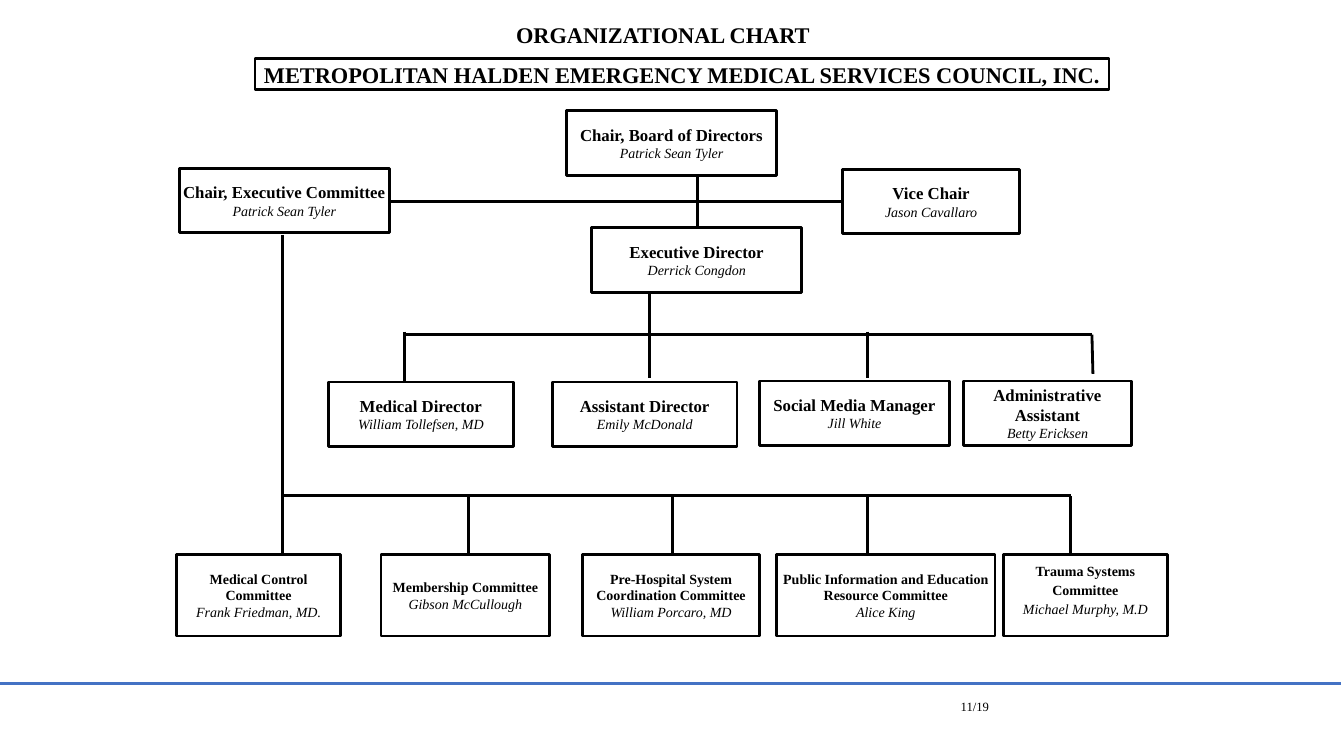
from lxml import etree
from pptx import Presentation
from pptx.dml.color import RGBColor
from pptx.enum.shapes import MSO_CONNECTOR as Connector, MSO_SHAPE as Shape
from pptx.enum.text import MSO_ANCHOR as Anchor, MSO_AUTO_SIZE as AutoSize, PP_ALIGN as Align
from pptx.oxml.ns import qn
from pptx.util import Inches, Pt

BLACK = RGBColor(0x00, 0x00, 0x00)
WHITE = RGBColor(0xFF, 0xFF, 0xFF)
BLUE = RGBColor(0x44, 0x72, 0xC4)
FONT = "Times New Roman"
LINE_WIDTH = Pt(2)

# Content
TITLE = "ORGANIZATIONAL CHART"
COUNCIL = "METROPOLITAN HALDEN EMERGENCY MEDICAL SERVICES COUNCIL, INC."
PAGE_NUMBER = "11/19"

# Officers and staff: left, top, width, filled, role lines, person
STAFF = [
    (5.62, 1.1, 2.08, True, ["Chair, Board of Directors"], "Patrick Sean Tyler"),
    (1.78, 1.67, 2.08, False, ["Chair, Executive Committee"], "Patrick Sean Tyler"),
    (8.36, 1.68, 1.75, True, ["Vice Chair"], "Jason Cavallaro"),
    (5.87, 2.26, 2.08, False, ["Executive Director"], "Derrick Congdon"),
    (3.26, 3.79, 1.83, False, ["Medical Director"], "William Tollefsen, MD"),
    (5.48, 3.79, 1.83, True, ["Assistant Director"], "Emily McDonald"),
    (7.53, 3.78, 1.89, False, ["Social Media Manager"], "Jill White"),
    (9.56, 3.78, 1.66, False, ["Administrative", "Assistant"], "Betty Ericksen"),
]
STAFF_HEIGHT = 0.64

# Committees: left, width, name lines, person
COMMITTEES = [
    (1.75, 1.63, ["Medical Control", "Committee"], "Frank Friedman, MD."),
    (3.78, 1.67, ["Membership Committee"], "Gibson McCullough"),
    (5.78, 1.75, ["Pre-Hospital System", "Coordination Committee"], "William Porcaro, MD"),
    (7.7, 2.17, ["Public Information and Education", "Resource Committee"], "Alice King"),
]
TRAUMA_LEFT, TRAUMA_WIDTH = 9.95, 1.63
TRAUMA_NAME, TRAUMA_PERSON = ["Trauma Systems", "Committee"], "Michael Murphy, M.D"
COMMITTEE_TOP, COMMITTEE_HEIGHT = 5.5, 0.81

# Connectors: x1, y1, x2, y2
COMMITTEE_BUS = 4.92
COMMITTEE_DROPS = [4.65, 6.67, 8.6, 10.62]
LINES = [
    (6.92, 1.75, 6.92, 2.25),
    (3.87, 2, 6.95, 2),
    (6.92, 2, 8.35, 2),
    (6.44, 2.92, 6.44, 3.75),
    (4, 3.32, 10.83, 3.32),
    (4.01, 3.29, 4.01, 3.8),
    (8.6, 3.29, 8.6, 3.75),
    (10.83, 3.32, 10.84, 3.71),
    (2.8, 2.33, 2.8, COMMITTEE_TOP),
    (2.8, COMMITTEE_BUS, COMMITTEE_DROPS[-1], COMMITTEE_BUS),
] + [(x, COMMITTEE_BUS, x, COMMITTEE_TOP) for x in COMMITTEE_DROPS]

deck = Presentation()
deck.slide_width, deck.slide_height = Inches(13.33), Inches(7.5)
page = deck.slides.add_slide(deck.slide_layouts[6])


def write(frame, lines, size=10, bold=True, person=None, person_size=10,
          align=Align.CENTER, anchor=Anchor.MIDDLE, wrap=False,
          spacing=None, gap=0):
    frame.word_wrap = wrap
    frame.vertical_anchor = anchor
    rows = [(line, size, bold, False) for line in lines]
    if person:
        rows.append((person, person_size, False, True))
    for index, (text, points, heavy, italic) in enumerate(rows):
        para = frame.add_paragraph() if index else frame.paragraphs[0]
        para.alignment = align
        if spacing:
            para.line_spacing = spacing
        if index and gap:
            para.space_before = Pt(gap)
        span = para.add_run()
        span.text = text
        span.font.name = FONT
        span.font.size = Pt(points)
        span.font.bold = heavy
        span.font.italic = italic
        span.font.color.rgb = BLACK


def add_box(left, top, width, height, filled=False):
    box = page.shapes.add_shape(
        Shape.RECTANGLE, Inches(left), Inches(top), Inches(width), Inches(height))
    box.shadow.inherit = False
    if filled:
        box.fill.solid()
        box.fill.fore_color.rgb = WHITE
    else:
        box.fill.background()
    box.line.color.rgb = BLACK
    box.line.width = LINE_WIDTH
    return box.text_frame


def add_label(left, top, width, height):
    label = page.shapes.add_textbox(
        Inches(left), Inches(top), Inches(width), Inches(height))
    label.text_frame.auto_size = AutoSize.SHAPE_TO_FIT_TEXT
    return label.text_frame


def add_line(x1, y1, x2, y2, color=BLACK):
    line = page.shapes.add_connector(
        Connector.STRAIGHT, Inches(x1), Inches(y1), Inches(x2), Inches(y2))
    line.line.color.rgb = color
    line.line.width = LINE_WIDTH
    etree.SubElement(line._element.spPr, qn("a:effectLst"))


# Headings
write(add_label(4.95, 0.16, 3.25, 0.37), [TITLE], size=16, anchor=Anchor.TOP, wrap=True)
write(add_box(2.53, 0.58, 8.47, 0.31), [COUNCIL], size=16)

# Officers and staff
for left, top, width, filled, role, person in STAFF:
    write(add_box(left, top, width, STAFF_HEIGHT, filled), role, size=12, person=person)

# Committees
for left, width, name, person in COMMITTEES:
    write(add_box(left, COMMITTEE_TOP, width, COMMITTEE_HEIGHT), name, person=person)
add_box(TRAUMA_LEFT, COMMITTEE_TOP, TRAUMA_WIDTH, COMMITTEE_HEIGHT)
write(add_label(10.03, 5.58, 1.47, 0.62), TRAUMA_NAME, person=TRAUMA_PERSON,
      anchor=Anchor.TOP, spacing=0.7, gap=5)

# Connectors
for ends in LINES:
    add_line(*ends)

# Footer
add_line(0, 6.78, 13.3, 6.78, color=BLUE)
write(add_label(9.43, 6.88, 0.49, 0.25), [PAGE_NUMBER], size=9, bold=False,
      align=Align.LEFT, anchor=Anchor.TOP)

deck.save("out.pptx")
